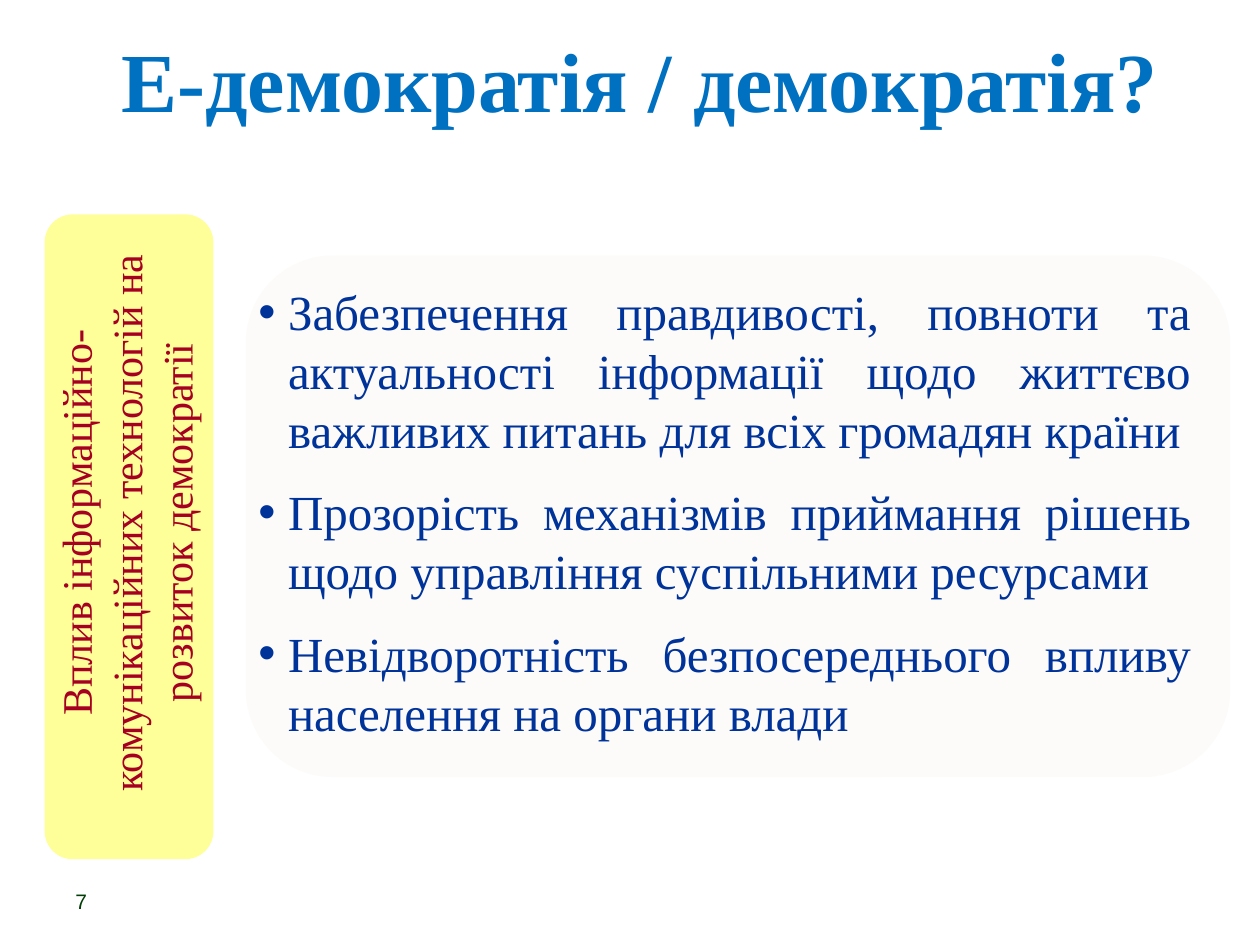
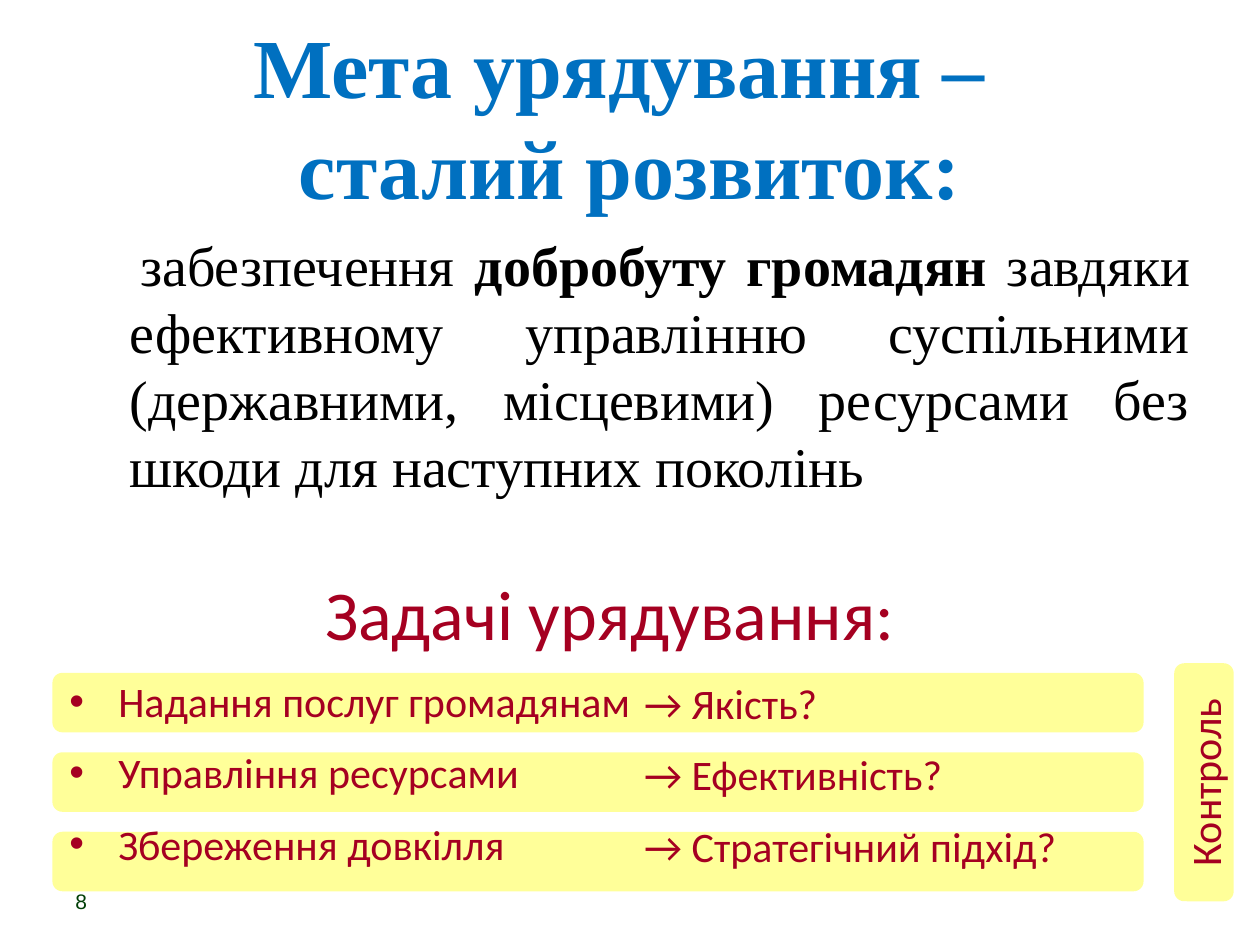
from dataclasses import dataclass
from typing import Any

from lxml.etree import SubElement
from pptx import Presentation
from pptx.dml.color import RGBColor as Color
from pptx.enum.shapes import MSO_SHAPE as Preset
from pptx.enum.text import MSO_ANCHOR as Anchor, MSO_AUTO_SIZE as AutoSize, PP_ALIGN as Align
from pptx.oxml.ns import qn
from pptx.util import Pt


@dataclass(frozen=True)
class Theme:
    serif: str = "Times New Roman"
    sans: str = "Calibri"
    plain: str = "Arial"
    title: str = "0070C0"
    navy: str = "003399"
    crimson: str = "A50021"
    green: str = "003E06"
    black: str = "000000"
    yellow: str = "FFFF99"
    cream: str = "FCFBF9"
    title_size: int = 48
    heading_size: int = 40
    body_size: int = 32
    list_size: int = 28
    label_size: int = 24
    number_size: int = 12


THEME = Theme()


@dataclass(frozen=True)
class Area:
    left: float
    top: float
    width: float
    height: float
    rotation: float = 0


@dataclass(frozen=True)
class Panel:
    area: Area
    color: str
    preset: Preset = Preset.ROUNDED_RECTANGLE


@dataclass(frozen=True)
class Style:
    font: str
    size: int
    color: str
    bold: bool = False
    align: Align = Align.LEFT
    before: float = 0
    after: float = 0
    margin: float = 0
    first_line: float = 0
    bullet: bool = False


@dataclass(frozen=True)
class Line:
    """A paragraph; text between asterisks is bold."""
    text: str
    style: Style


TITLE = Style(THEME.serif, THEME.title_size, THEME.title, bold=True, align=Align.CENTER)
NUMBER = Style(THEME.plain, THEME.number_size, THEME.green)
IMPACT = Style(THEME.serif, THEME.label_size, THEME.crimson, align=Align.CENTER)
CONTROL = Style(THEME.sans, THEME.label_size, THEME.crimson, align=Align.CENTER)
EFFECT = Style(THEME.serif, THEME.list_size, THEME.navy, align=Align.JUSTIFY,
               after=13.5, margin=17, first_line=-17, bullet=True)
GOAL = Style(THEME.serif, THEME.body_size, THEME.black, align=Align.JUSTIFY,
             margin=27.5, first_line=6)
HEADING = Style(THEME.sans, THEME.heading_size, THEME.crimson, align=Align.CENTER)
TASK = Style(THEME.sans, THEME.label_size, THEME.crimson,
             before=12, margin=28, first_line=-28, bullet=True)
ANSWER = Style(THEME.sans, THEME.label_size, THEME.crimson, after=12)


def apply(target: Any, values: dict[str, Any]) -> None:
    for name, value in values.items():
        setattr(target, name, value)


def place(item: Any, area: Area) -> None:
    apply(item, {"left": Pt(area.left), "top": Pt(area.top), "width": Pt(area.width),
                 "height": Pt(area.height), "rotation": area.rotation})


def write(frame: Any, lines: list[Line], anchor: Anchor = Anchor.TOP) -> None:
    apply(frame, {"word_wrap": True, "auto_size": AutoSize.NONE, "vertical_anchor": anchor})
    for index, line in enumerate(lines):
        style = line.style
        para = frame.add_paragraph() if index else frame.paragraphs[0]
        apply(para, {"alignment": style.align, "space_before": Pt(style.before),
                     "space_after": Pt(style.after)})
        # Indents and bullet
        properties = para._p.get_or_add_pPr()
        properties.set("marL", str(Pt(style.margin)))
        properties.set("indent", str(Pt(style.first_line)))
        if style.bullet:
            SubElement(properties, qn("a:buFont")).set("typeface", THEME.plain)
            SubElement(properties, qn("a:buChar")).set("char", "•")
        else:
            SubElement(properties, qn("a:buNone"))
        # Spans, split at forced breaks and at bold marks
        for row, row_text in enumerate(line.text.split("\n")):
            if row:
                para.add_line_break()
            for part, text in enumerate(row_text.split("*")):
                span = para.add_run()
                span.text = text
                apply(span.font, {"name": style.font, "size": Pt(style.size),
                                  "bold": style.bold or part % 2 == 1})
                span.font.color.rgb = Color.from_string(style.color)


def add_text(page: Any, area: Area, lines: list[Line], anchor: Anchor = Anchor.TOP) -> None:
    box = page.shapes.add_textbox(0, 0, 0, 0)
    place(box, area)
    write(box.text_frame, lines, anchor)


def add_panel(page: Any, panel: Panel) -> None:
    shape = page.shapes.add_shape(panel.preset, 0, 0, 0, 0)
    place(shape, panel.area)
    shape.shadow.inherit = False
    shape.fill.solid()
    shape.fill.fore_color.rgb = Color.from_string(panel.color)
    shape.line.fill.background()


def add_page(deck: Any, number: int, title: str, area: Area, panels: list[Panel]) -> Any:
    """Add a page with its number, panels and title."""
    page = deck.slides.add_slide(deck.slide_layouts[5])
    add_text(page, Area(36, 500.5, 168, 28.5), [Line(str(number), NUMBER)], Anchor.MIDDLE)
    for panel in panels:
        add_panel(page, panel)
    place(page.shapes.title, area)
    write(page.shapes.title.text_frame, [Line(title, TITLE)], Anchor.MIDDLE)
    return page


def build_democracy(deck: Any) -> None:
    panels = [
        Panel(Area(25.5, 122.5, 96.5, 368.5), THEME.yellow, Preset.FLOWCHART_ALTERNATE_PROCESS),
        Panel(Area(140.5, 146, 562.5, 298), THEME.cream, Preset.FLOWCHART_ALTERNATE_PROCESS),
    ]
    page = add_page(deck, 7, "Е-демократія / демократія?", Area(42.5, 0, 646.5, 90), panels)
    effects = [
        "Забезпечення правдивості, повноти та актуальності інформації "
        "щодо життєво важливих питань для всіх громадян країни",
        "Прозорість механізмів приймання рішень щодо управління суспільними ресурсами",
        "Невідворотність безпосереднього впливу населення на органи влади",
    ]
    add_text(page, Area(140.5, 157.5, 547, 278.5), [Line(text, EFFECT) for text in effects])
    impact = "Вплив інформаційно-комунікаційних технологій на розвиток демократії"
    add_text(page, Area(-98, 251.5, 340.5, 94.5, 270), [Line(impact, IMPACT)])


def build_governance(deck: Any) -> None:
    tasks = {
        "Надання послуг громадянам": "→ Якість?",
        "Управління ресурсами": "→ Ефективність?",
        "Збереження довкілля": "→ Стратегічний підхід?",
    }
    # One band per task and an upright one for control
    panels = [Panel(Area(30, 384.5 + 45.4 * row, 623.5, 34), THEME.yellow)
              for row in range(len(tasks))]
    panels.append(Panel(Area(620, 430, 136, 34, 270), THEME.yellow))
    page = add_page(deck, 8, "Мета урядування – \nсталий розвиток:", Area(0, 21, 720, 90), panels)

    goal = ("забезпечення *добробуту громадян* завдяки ефективному управлінню суспільними "
            "(державними, місцевими) ресурсами без шкоди для наступних поколінь")
    add_text(page, Area(39.5, 128, 648, 161.5), [Line(goal, GOAL)])

    # Tasks on the left, the measure of each in a second column
    add_text(page, Area(32.5, 322.5, 632, 186.5),
             [Line("Задачі урядування:", HEADING), *(Line(task, TASK) for task in tasks)])
    add_text(page, Area(361, 383.5, 290, 125.5),
             [Line(answer, ANSWER) for answer in tasks.values()])
    add_text(page, Area(620.5, 429, 135.5, 36, 270), [Line("Контроль", CONTROL)])


def main() -> None:
    deck = Presentation()
    apply(deck, {"slide_width": Pt(720), "slide_height": Pt(540)})
    build_democracy(deck)
    build_governance(deck)
    deck.save("out.pptx")


if __name__ == "__main__":
    main()
